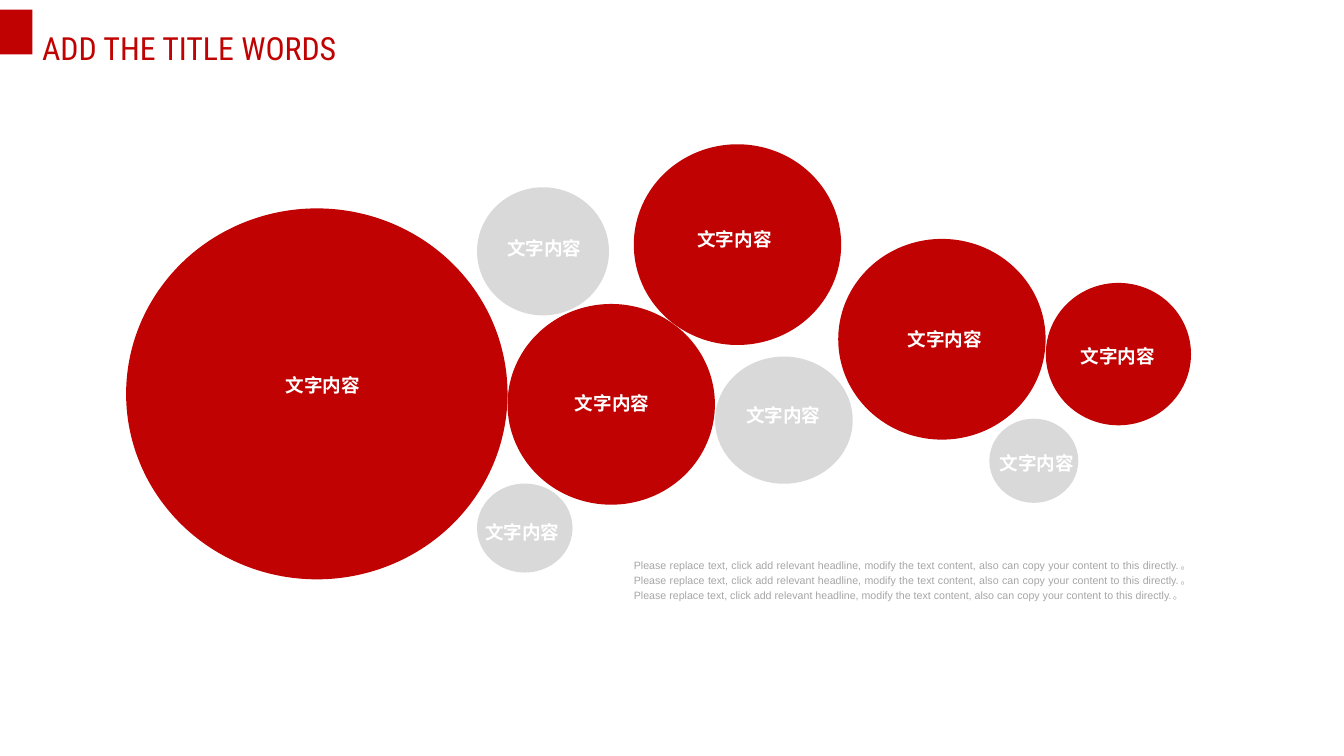
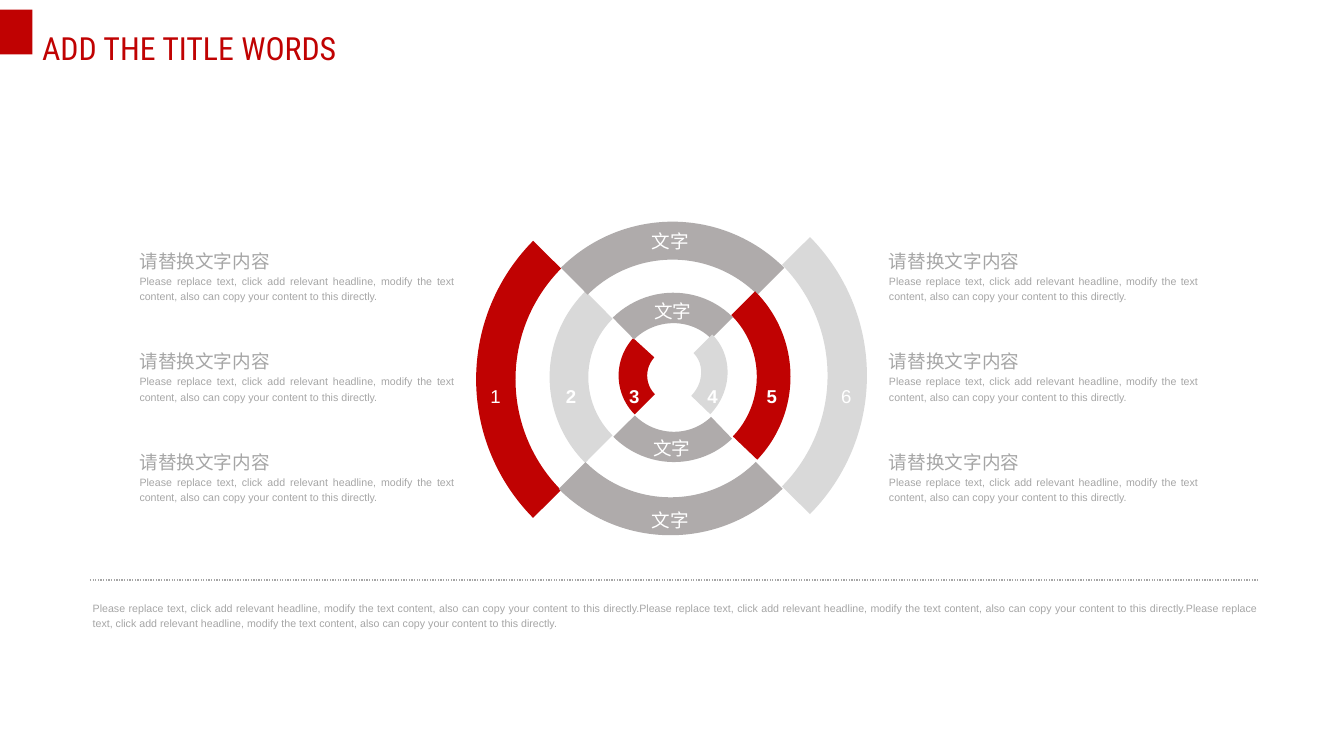
from lxml.etree import SubElement
from pptx import Presentation
from pptx.dml.color import RGBColor
from pptx.enum.dml import MSO_LINE
from pptx.enum.shapes import MSO_CONNECTOR, MSO_SHAPE as Shape
from pptx.enum.text import MSO_ANCHOR as Anchor, MSO_AUTO_SIZE as AutoSize, PP_ALIGN as Align
from pptx.oxml.ns import qn
from pptx.util import Pt

COLORS = {"red": "C00202", "light": "D9D9D9", "mid": "AFABAB", "text": "A6A6A6", "white": "FFFFFF"}
SENTENCE = ("Please replace text, click add relevant headline, modify the text content, "
            "also can copy your content to this directly.")


def rgb(color):
    return RGBColor.from_string(COLORS[color])


class Deck:
    body_font = "Arial"
    title_font = "Roboto Condensed"

    def __init__(self):
        self.prs = Presentation()
        self.prs.slide_width, self.prs.slide_height = Pt(1012.3), Pt(569.5)
        self.slide = None

    def new_slide(self, heading):
        self.slide = self.prs.slides.add_slide(self.prs.slide_layouts[5])
        self.shape(Shape.RECTANGLE, 0, 7.2, 24.5, 33.8, "red")
        title = self.slide.shapes.title
        title.left, title.top, title.width, title.height = Pt(24.5), Pt(3.6), Pt(254.9), Pt(45.4)
        frame = title.text_frame
        frame.text = heading
        frame.auto_size = AutoSize.NONE
        frame.vertical_anchor = Anchor.TOP
        self.style(frame.paragraphs[0], 24, "red", Align.LEFT, spacing=1.5, font=self.title_font)

    def style(self, paragraph, size, color, align, bold=False, spacing=1.2, font=body_font):
        paragraph.alignment = align
        paragraph.line_spacing = spacing
        for run in paragraph.runs:
            run.font.name = font
            run.font.size = Pt(size)
            run.font.bold = bold
            run.font.color.rgb = rgb(color)

    def shape(self, kind, left, top, width, height, color):
        shape = self.slide.shapes.add_shape(kind, Pt(left), Pt(top), Pt(width), Pt(height))
        shape.shadow.inherit = False
        shape.fill.solid()
        shape.fill.fore_color.rgb = rgb(color)
        shape.line.fill.background()
        return shape

    def arc(self, left, top, width, height, color, rotation, start, end, thickness):
        arc = self.shape(Shape.BLOCK_ARC, left, top, width, height, color)
        arc.rotation = rotation
        for index, value in enumerate((start, end, thickness)):
            arc.adjustments[index] = value

    def text(self, left, top, width, height, lines, color="text", align=Align.JUSTIFY,
             bold=False, wrap=True, inset=0, anchor=Anchor.TOP):
        box = self.slide.shapes.add_textbox(Pt(left), Pt(top), Pt(width), Pt(height))
        frame = box.text_frame
        frame.text = "\n".join(words for words, size in lines)
        frame.word_wrap = wrap
        frame.auto_size = AutoSize.SHAPE_TO_FIT_TEXT
        frame.vertical_anchor = anchor
        frame.margin_left = frame.margin_right = Pt(inset)
        frame.margin_top = frame.margin_bottom = Pt(inset / 2)
        for paragraph, (words, size) in zip(frame.paragraphs, lines):
            self.style(paragraph, size, color, align, bold)

    def label(self, left, top, width, height, words, bold=False):
        self.text(left, top, width, height, [(words, 14)], "white", Align.CENTER, bold,
                  anchor=Anchor.MIDDLE)

    def dotted_rule(self, left, right, y):
        rule = self.slide.shapes.add_connector(MSO_CONNECTOR.STRAIGHT, Pt(left), Pt(y), Pt(right), Pt(y))
        rule.line.color.rgb = rgb("text")
        rule.line.width = Pt(1)
        rule.line.dash_style = MSO_LINE.ROUND_DOT
        SubElement(rule._element.spPr, qn("a:effectLst"))


def add_bubbles(deck):
    deck.new_slide("ADD THE TITLE WORDS")
    bubbles = [
        (95, 157, 287.3, 279.4, "red", 207.4, 275),
        (359.3, 141.1, 99.4, 96.5, "light", 374.4, 171.4),
        (382.3, 229, 156.2, 151.2, "red", 425.5, 288),
        (359.3, 364.3, 72, 67, "light", 357.8, 385.2),
        (477.4, 108.7, 156.2, 151.2, "red", 517.7, 164.9),
        (538.6, 268.6, 103.7, 95.8, "light", 554.4, 297.4),
        (631.4, 180, 156.2, 151.2, "red", 676.1, 239.8),
        (745.2, 315.4, 67, 63.4, "light", 745.2, 333.4),
        (787.7, 213.1, 109.4, 107.3, "red", 806.4, 252.7),
    ]
    for left, top, width, height, color, label_left, label_top in bubbles:
        deck.shape(Shape.OVAL, left, top, width, height, color)
        deck.text(label_left, label_top, 71.3, 25.9, [("文字内容", 14)], "white",
                  Align.CENTER, bold=True, wrap=False, inset=7.2)
    deck.text(477.4, 419, 419.8, 33.8, [((SENTENCE + "。") * 3, 8)])


def add_rings(deck):
    deck.new_slide("ADD THE TITLE WORDS")
    facing_left, facing_up, facing_right, facing_down = 315, 45, 135, 225
    arcs = [
        (358.6, 137.5, 296.6, 296.6, "red", facing_left, 108.18, 161.84, 0.1),
        (414, 193, 182.2, 182.2, "light", facing_left, 107.93, 162.15, 0.16),
        (465.8, 241.2, 83.5, 82.8, "red", facing_left, 107.93, 160.4, 0.26),
        (387.4, 167, 238.3, 238.3, "mid", facing_up, 108.06, 161.97, 0.12),
        (442.4, 220, 127.4, 129.6, "mid", facing_up, 108.33, 162.07, 0.18),
        (385.9, 164.9, 238.3, 238.3, "mid", facing_down, 107.93, 161.97, 0.12),
        (442.8, 221, 128.2, 126.7, "mid", facing_down, 108.6, 162.07, 0.18),
        (356.4, 134.6, 296.6, 296.6, "light", facing_right, 108.18, 161.84, 0.1),
        (414, 193, 181.4, 181.4, "red", facing_right, 107.93, 161.18, 0.14),
        (460.8, 241.9, 88.6, 82.8, "light", facing_right, 107.93, 161.33, 0.24),
    ]
    for arc in arcs:
        deck.arc(*arc)

    for number, left in enumerate((342, 398.9, 446.4, 505.4, 550.1, 606.2), start=1):
        deck.label(left, 286.2, 62.6, 20.9, str(number), bold=1 < number < 6)
    for left, top in ((473.8, 170.6), (475.9, 223.2), (475.2, 326.9), (473.8, 380.9)):
        deck.label(left, top, 61.9, 18.7, "文字")

    for left, width in ((105.1, 237.6), (669.6, 233.3)):
        for row in range(3):
            deck.text(left, 185 + 75.6 * row, width, 43.9, [("请替换文字内容", 14), (SENTENCE, 8)])

    deck.dotted_rule(67.7, 948.2, 437)
    deck.text(69.8, 451.4, 879.1, 23, [(SENTENCE * 3, 8)])


def main():
    deck = Deck()
    add_bubbles(deck)
    add_rings(deck)
    deck.prs.save("out.pptx")


if __name__ == "__main__":
    main()
